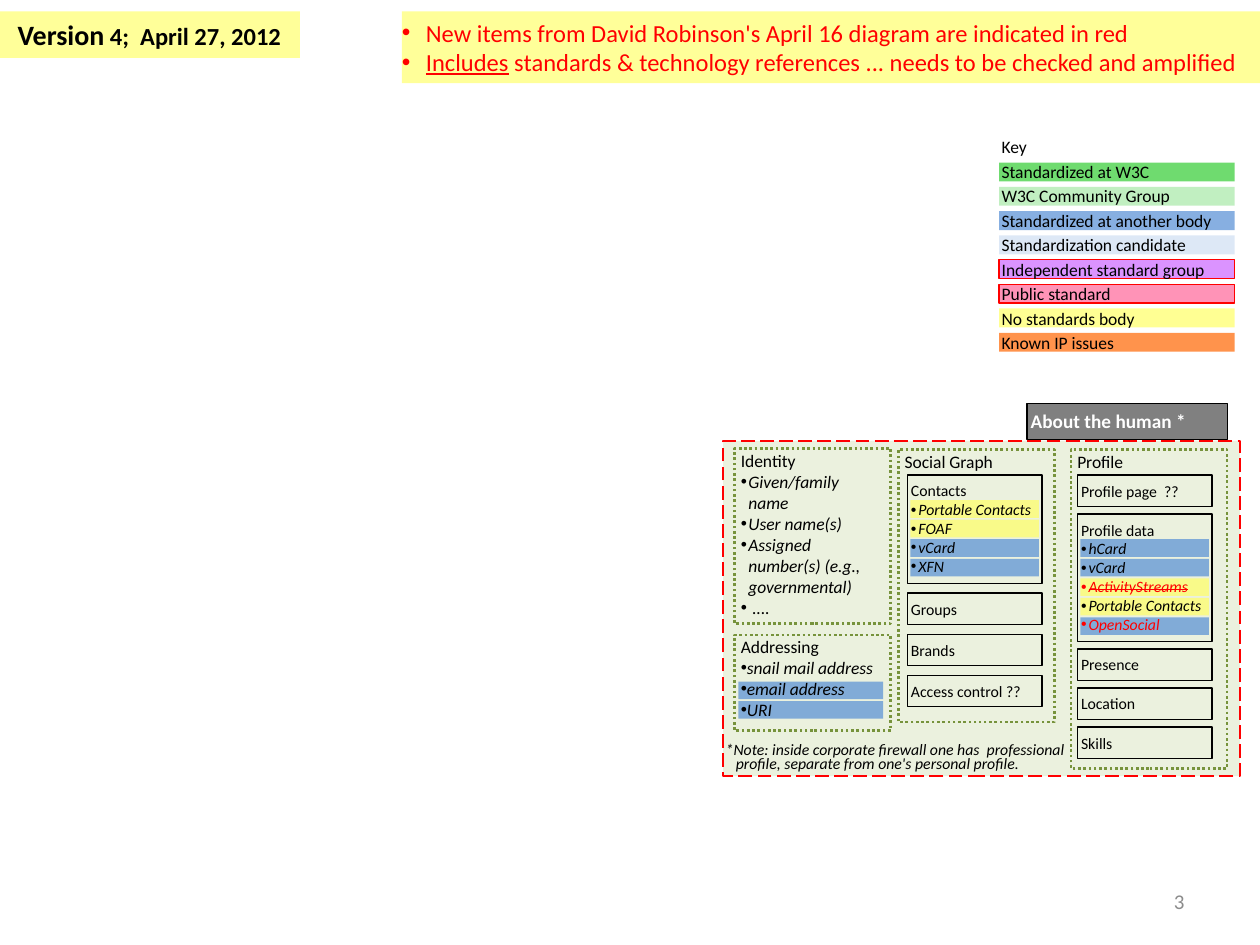
import pptx
import pptx.util
import pptx.dml.color
import pptx.enum.dml
import pptx.enum.shapes
import pptx.enum.text
import pptx.oxml.ns
import lxml.etree

Inches, Pt = pptx.util.Inches, pptx.util.Pt
DASH = pptx.enum.dml.MSO_LINE
ALIGN = pptx.enum.text.PP_ALIGN
ANCHOR = pptx.enum.text.MSO_ANCHOR
qn = pptx.oxml.ns.qn

FONT = "Calibri"
COLORS = {
    "black": "000000", "white": "FFFFFF", "red": "FF0000", "gray": "808080",
    "page": "8C8C8C", "banner": "FFFF99", "panel": "EBF1DE", "olive": "77933C",
    "green": "33CC33", "blue": "558ED5", "yellow": "FFFF66",
    "purple": "CC66FF", "pink": "FF6699", "orange": "FF6600",
}
SOLID = 70  # usual opacity of a highlight bar, in percent

# ---- Content ----
VERSION = [("Version", 16), (" 4;  April 27, 2012", 14)]
NEWS = [
    [("New items from David Robinson's April 16 diagram are indicated in red", {})],
    [("Includes", {"underline": True}),
     (" standards & technology references ... needs to be checked and amplified", {})],
]
KEY = [  # label, colour, opacity, outlined
    ("Standardized at W3C", "green", SOLID, False),
    ("W3C Community Group", "green", 30, False),
    ("Standardized at another body", "blue", SOLID, False),
    ("Standardization candidate", "blue", 20, False),
    ("Independent standard group", "purple", SOLID, True),
    ("Public standard", "pink", SOLID, True),
    ("No standards body", "yellow", SOLID, False),
    ("Known IP issues", "orange", SOLID, False),
]
GROUPS = [  # title, (left, top, height), bullet items, text margin
    ("Identity", (5.83, 3.56, 1.39), ["Given/family name", "User name(s)",
     "Assigned number(s) (e.g., governmental)", " ...."], 0.06),
    ("Addressing", (5.83, 5.04, 0.76), ["snail mail address", "email address", "URI"], 0),
    ("Social Graph", (7.13, 3.57, 2.16), [], 0),
    ("Profile", (8.5, 3.57, 2.53), [], 0),
]
ADDRESS_BARS = 2  # email address and URI
STACKS = [  # left, bottom, boxes: (label, height, items: (name, bar colour, font options))
    (7.2, 5.61, [
        ("Contacts", 0.86, [("Portable Contacts", "yellow", {}), ("FOAF", "yellow", {}),
                            ("vCard", "blue", {}), ("XFN", "blue", {})]),
        ("Groups", 0.25, []), ("Brands", 0.25, []), ("Access control ??", 0.25, []),
    ]),
    (8.55, 6.02, [
        ("Profile page  ??", 0.25, []),
        ("Profile data", 1.01, [
            ("hCard", "blue", {}), ("vCard", "blue", {}),
            ("ActivityStreams", "yellow", {"color": "red", "strike": True}),
            ("Portable Contacts", "yellow", {}), ("OpenSocial", "blue", {"color": "red"})]),
        ("Presence", 0.25, []), ("Location", 0.25, []), ("Skills", 0.25, []),
    ]),
]
NOTE = [("*Note: inside corporate firewall one has  professional", 0),
        ("profile, separate from one's personal profile.", 0.08)]

# ---- Grid ----
GROUP_W, BOX_W, BAR_W = 1.24, 1.07, 1.02
STACK_TOP = 3.77
BAR_H, BAR_STEP = 0.14, 0.155
KEY_TOP, KEY_STEP = 1.29, 0.193
GROUP_INS = (0.05, 0.01, 0.1, 0.05)
BOX_INS = (0.03, 0.05, 0.02, 0.05)


def rgb(name):
    return pptx.dml.color.RGBColor.from_string(COLORS[name])


def set_text_frame(sp, ins, anchor=ANCHOR.TOP):
    tf = sp.text_frame
    tf.word_wrap = True
    tf.vertical_anchor = anchor
    tf.margin_left, tf.margin_top, tf.margin_right, tf.margin_bottom = map(Inches, ins)
    return tf


def add_box(s, at, fill=None, alpha=100, line=None, width=0.75, dash=None, ins=BOX_INS):
    sp = s.shapes.add_shape(pptx.enum.shapes.MSO_SHAPE.RECTANGLE, *map(Inches, at))
    sp.shadow.inherit = False
    if fill:
        sp.fill.solid()
        sp.fill.fore_color.rgb = rgb(fill)
        if alpha < 100:
            clr = sp.fill._xPr.find(".//" + qn("a:srgbClr"))
            lxml.etree.SubElement(clr, qn("a:alpha")).set("val", str(alpha * 1000))
    else:
        sp.fill.background()
    if line:
        sp.line.color.rgb = rgb(line)
        sp.line.width = Pt(width)
        if dash:
            sp.line.dash_style = dash
    else:
        sp.line.fill.background()
    set_text_frame(sp, ins)
    return sp


def add_textbox(s, at, ins, anchor=ANCHOR.TOP):
    sp = s.shapes.add_textbox(*map(Inches, at))
    set_text_frame(sp, ins, anchor)
    return sp


def add_paragraph(tf, align=ALIGN.LEFT, margin=0, indent=0, bullet=False):
    """Return the empty first paragraph, or a new one."""
    p = tf.paragraphs[0] if not tf.paragraphs[0].runs else tf.add_paragraph()
    p.alignment = align
    pPr = p._p.get_or_add_pPr()
    pPr.set("marL", str(Inches(margin)))
    pPr.set("indent", str(Inches(indent)))
    if bullet:
        lxml.etree.SubElement(pPr, qn("a:buFont")).set("typeface", "Arial")
        lxml.etree.SubElement(pPr, qn("a:buChar")).set("char", "•")
    return p


def add_run(p, text, size, color="black", bold=False, italic=False,
            underline=False, strike=False):
    r = p.add_run()
    r.text = text
    f = r.font
    f.name, f.size, f.bold, f.italic = FONT, Pt(size), bold, italic
    f.underline = underline
    f.color.rgb = rgb(color)
    if strike:
        r._r.get_or_add_rPr().set("strike", "sngStrike")


def add_bars(s, left, top, width, colors):
    for i, color in enumerate(colors):
        add_box(s, (left, top + i * BAR_STEP, width, BAR_H), color, SOLID)


def add_stack(s, left, bottom, boxes):
    free = bottom - STACK_TOP - sum(h for _, h, _ in boxes)
    gap = free / (len(boxes) - 1)
    y = STACK_TOP
    for label, height, items in boxes:
        add_bars(s, left + 0.025, y + 0.2, BAR_W, [color for _, color, _ in items])
        tf = add_box(s, (left, y, BOX_W, height), line="black").text_frame
        add_run(add_paragraph(tf), label, 9)
        for name, _, options in items:
            p = add_paragraph(tf, margin=0.06, indent=-0.06, bullet=True)
            add_run(p, name, 9, italic=True, **options)
        y += height + gap


def main():
    prs = pptx.Presentation()
    prs.slide_width, prs.slide_height = Inches(10), Inches(7.5)
    s = prs.slides.add_slide(prs.slide_layouts[6])

    # Panel with its heading tab
    add_box(s, (5.74, 3.5, 4.1, 2.66), "panel", line="red", width=1, dash=DASH.LONG_DASH)
    tab = add_box(s, (8.15, 3.2, 1.59, 0.29), "gray", line="black")
    add_run(add_paragraph(tab.text_frame), "About the human *", 11, "white", bold=True)

    # Dotted groups and the boxes stacked in them
    add_bars(s, 5.86, 5.41, 1.15, ["blue"] * ADDRESS_BARS)
    for title, (left, top, height), items, margin in GROUPS:
        tf = add_box(s, (left, top, GROUP_W, height), line="olive", width=1.5,
                     dash=DASH.ROUND_DOT, ins=GROUP_INS).text_frame
        add_run(add_paragraph(tf), title, 10)
        for item in items:
            p = add_paragraph(tf, margin=margin, indent=-0.06, bullet=True)
            add_run(p, item, 10, italic=True)
    for stack in STACKS:
        add_stack(s, *stack)

    # Footnote
    tf = add_textbox(s, (5.73, 5.86, 2.85, 0.33), (0.03, 0.05, 0.03, 0.05)).text_frame
    for text, margin in NOTE:
        p = add_paragraph(tf, margin=margin)
        p.line_spacing = Pt(8)
        add_run(p, text, 9, italic=True)

    # Colour key
    for i, (_, color, alpha, outlined) in enumerate(KEY):
        add_box(s, (7.93, KEY_TOP + i * KEY_STEP, 1.87, 0.15), color, alpha,
                line="red" if outlined else None)
    tf = add_textbox(s, (7.9, 1.07, 1.94, 1.83), GROUP_INS).text_frame
    for label in ["Key"] + [row[0] for row in KEY]:
        p = add_paragraph(tf)
        p.space_after = Pt(2)
        add_run(p, label, 10)

    # Banners
    sp = add_box(s, (0, 0.09, 2.38, 0.37), "banner", ins=(0.14, 0.05, 0.1, 0.05))
    p = add_paragraph(sp.text_frame)
    for text, size in VERSION:
        add_run(p, text, size, bold=True)
    sp = add_box(s, (3.19, 0.09, 6.81, 0.57), "banner", ins=(0, 0.05, 0, 0.05))
    for runs in NEWS:
        p = add_paragraph(sp.text_frame, margin=0.19, indent=-0.19, bullet=True)
        for text, options in runs:
            add_run(p, text, 14, "red", **options)

    # Page number
    sp = add_textbox(s, (7.17, 6.95, 2.33, 0.4), (0.1, 0.05, 0.1, 0.05), ANCHOR.MIDDLE)
    add_run(add_paragraph(sp.text_frame, ALIGN.RIGHT), "3", 12, "page")

    prs.save("out.pptx")


if __name__ == "__main__":
    main()
